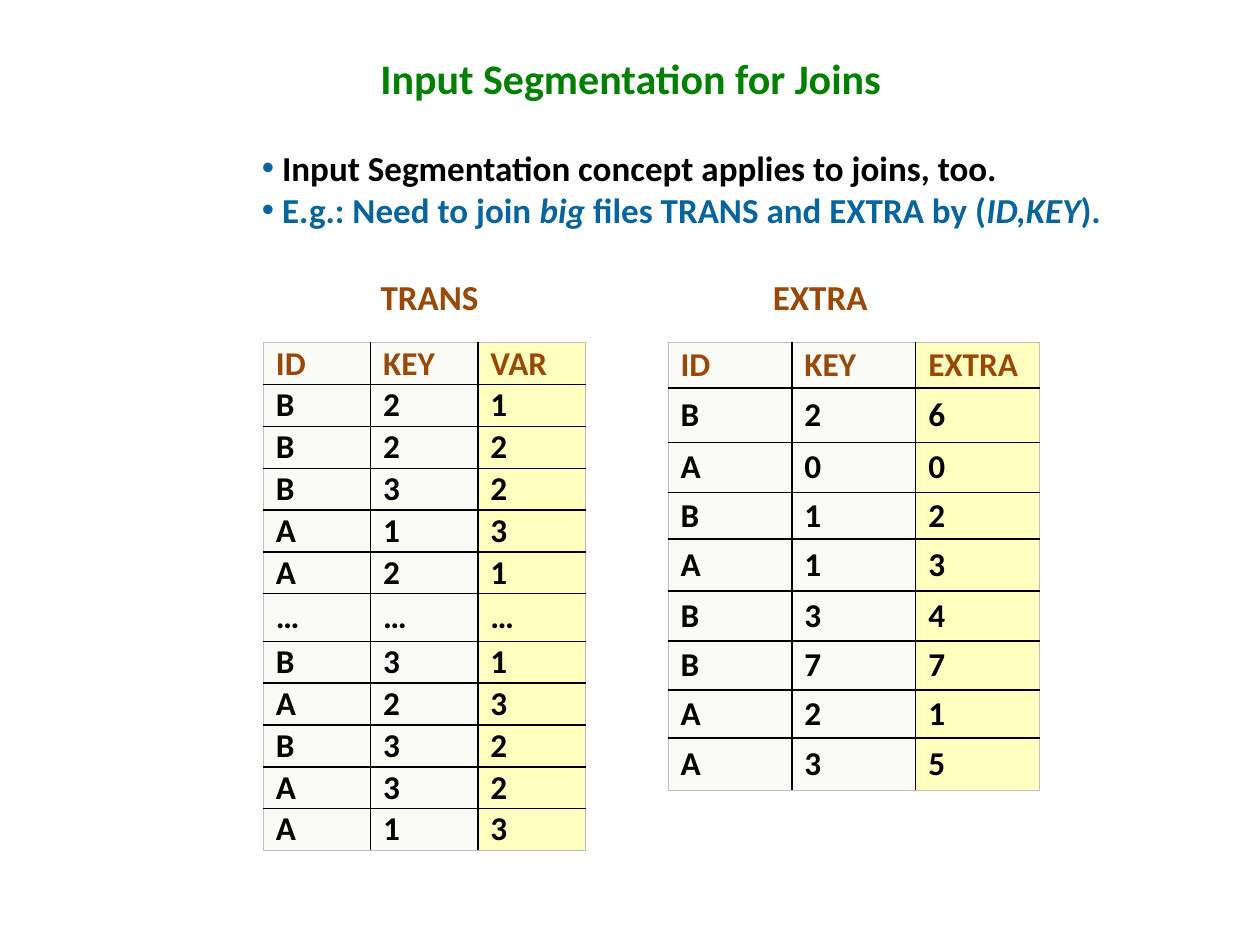
from lxml import etree
from pptx import Presentation
from pptx.dml.color import RGBColor
from pptx.enum import text
from pptx.oxml import ns
from pptx.util import Pt


def color(hex_code):
    return RGBColor.from_string(hex_code)


def style(font, size, hex_code, bold=True):
    font.name = "Calibri"
    font.size = Pt(size)
    font.bold = bold
    font.color.rgb = color(hex_code)


BROWN, BLUE, BLACK, GRAY = "984807", "08649C", "000000", "BFBFBF"

deck = Presentation()
deck.slide_width, deck.slide_height = Pt(720), Pt(540)
page = deck.slides.add_slide(deck.slide_layouts[5])

title = page.shapes.title
title.left, title.top, title.width, title.height = Pt(49.7), Pt(20.2), Pt(621.4), Pt(48.2)
title.text_frame.text = "Input Segmentation for Joins"
title.text_frame.vertical_anchor = text.MSO_ANCHOR.MIDDLE
para = title.text_frame.paragraphs[0]
para.alignment = text.PP_ALIGN.CENTER
style(para.font, 24, "008000")

trans_rows = ["ID KEY VAR", "B 2 1", "B 2 2", "B 3 2", "A 1 3", "A 2 1", "… … …",
              "B 3 1", "A 2 3", "B 3 2", "A 3 2", "A 1 3"]
extra_rows = ["ID KEY EXTRA", "B 2 6", "A 0 0", "B 1 2", "A 1 3", "B 3 4",
              "B 7 7", "A 2 1", "A 3 5"]
trans_heights = [23.9] * 6 + [27.2] + [23.9] * 5
extra_heights = [25.9, 31.1, 28.5, 26.7, 29.8, 28.5, 28, 27.4, 29.9]

for left, column_width, rows, heights in [
    (150.5, 61.3, trans_rows, trans_heights),
    (381.7, 70.8, extra_rows, extra_heights),
]:
    frame = page.shapes.add_table(len(rows), 3, Pt(left), Pt(195.9),
                                  Pt(3 * column_width), Pt(sum(heights)))
    table = frame.table
    for column in table.columns:
        column.width = Pt(column_width)
    for r, (row, height) in enumerate(zip(rows, heights)):
        table.rows[r].height = Pt(height)
        for c, value in enumerate(row.split()):
            cell = table.cell(r, c)
            cell.text = value
            cell.vertical_anchor = text.MSO_ANCHOR.MIDDLE
            cell.margin_left = cell.margin_right = Pt(7.2)
            cell.margin_top = cell.margin_bottom = 0
            style(cell.text_frame.paragraphs[0].font, 19, BROWN if r == 0 else BLACK)

            cell.fill.solid()
            cell.fill.fore_color.rgb = color("FFFF00" if c == 2 else "EEECE1")
            properties = cell._tc.get_or_add_tcPr()
            fill_color = properties.find(".//" + ns.qn("a:srgbClr"))
            etree.SubElement(fill_color, ns.qn("a:alpha"), val="25000")

            outer_edges = [("lnL", c == 0), ("lnR", c == 2),
                           ("lnT", r == 0), ("lnB", r == len(rows) - 1)]
            for position, (edge, is_outer) in enumerate(outer_edges):
                line = etree.Element(ns.qn("a:" + edge), w=str(Pt(0.5 if is_outer else 1)))
                line_fill = etree.SubElement(line, ns.qn("a:solidFill"))
                etree.SubElement(line_fill, ns.qn("a:srgbClr"), val=GRAY if is_outer else BLACK)
                properties.insert(position, line)

for label, left, width in [("TRANS", 198.7, 93.6), ("EXTRA", 424.8, 87.8)]:
    box = page.shapes.add_textbox(Pt(left), Pt(154.1), Pt(width), Pt(31.7))
    box.text_frame.word_wrap = True
    box.text_frame.auto_size = text.MSO_AUTO_SIZE.SHAPE_TO_FIT_TEXT
    para = box.text_frame.paragraphs[0]
    para.text = label
    para.alignment = text.PP_ALIGN.CENTER
    style(para.font, 20, BROWN)

box = page.shapes.add_textbox(Pt(142.6), Pt(79.9), Pt(497.5), Pt(55.4))
box.text_frame.word_wrap = False
box.text_frame.auto_size = text.MSO_AUTO_SIZE.SHAPE_TO_FIT_TEXT
bullets = [
    [(" ", BLUE, False, False),
     ("Input Segmentation concept applies to joins, too.", BLACK, True, False)],
    [(" E.g.: Need to join ", BLUE, True, False), ("big ", BLUE, True, True),
     ("files TRANS and EXTRA by (", BLUE, True, False),
     ("ID,KEY", BLUE, True, True), (").", BLUE, True, False)],
]
for index, spans in enumerate(bullets):
    para = box.text_frame.add_paragraph() if index else box.text_frame.paragraphs[0]
    properties = para._p.get_or_add_pPr()
    etree.SubElement(properties, ns.qn("a:buFont"), typeface="Arial")
    etree.SubElement(properties, ns.qn("a:buChar"), char="•")
    for words, hex_code, bold, italic in spans:
        span = para.add_run()
        span.text = words
        style(span.font, 20, hex_code, bold)
        span.font.italic = italic

deck.save("out.pptx")
